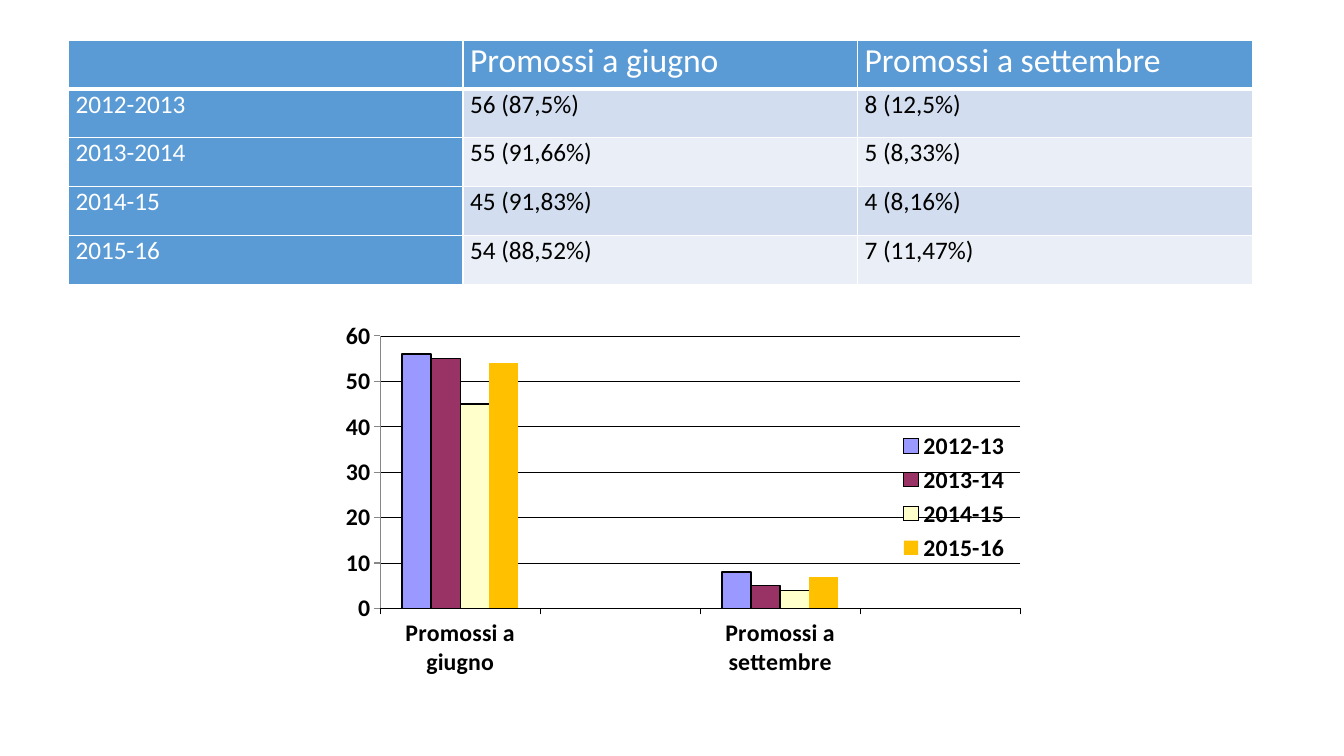
from dataclasses import dataclass

from lxml.etree import SubElement
from pptx import Presentation
from pptx.chart.chart import Chart
from pptx.chart.data import CategoryChartData
from pptx.dml.color import RGBColor
from pptx.enum.chart import XL_CHART_TYPE, XL_LEGEND_POSITION, XL_TICK_LABEL_POSITION, XL_TICK_MARK
from pptx.enum.text import PP_ALIGN
from pptx.oxml import parse_xml
from pptx.oxml.ns import nsdecls, qn
from pptx.slide import Slide
from pptx.table import _Cell
from pptx.util import Inches, Pt

FONT = "Calibri"
WHITE, BLACK, BLUE = "FFFFFF", "000000", "5B9BD5"
BANDS = ("D2DEEF", "EAEFF7")


@dataclass(frozen=True)
class SchoolYear:
    table_label: str
    chart_label: str
    june: int
    june_share: str
    september: int
    september_share: str
    bar_color: str
    outlined: bool = True


HEADERS = ("", "Promossi a giugno", "Promossi a settembre")
YEARS = (
    SchoolYear("2012-2013", "2012-13", 56, "87,5%", 8, "12,5%", "9999FF"),
    SchoolYear("2013-2014", "2013-14", 55, "91,66%", 5, "8,33%", "993366"),
    SchoolYear("2014-15", "2014-15", 45, "91,83%", 4, "8,16%", "FFFFCC"),
    SchoolYear("2015-16", "2015-16", 54, "88,52%", 7, "11,47%", "FFC000", False),
)


def rgb(color: str) -> RGBColor:
    return RGBColor.from_string(color)


def set_borders(cell: _Cell, bottom_width: int) -> None:
    properties = cell._tc.get_or_add_tcPr()
    for side, width in (("L", 1), ("R", 1), ("T", 1), ("B", bottom_width)):
        properties.append(parse_xml(
            f'<a:ln{side} {nsdecls("a")} w="{Pt(width)}"><a:solidFill>'
            f'<a:srgbClr val="{WHITE}"/></a:solidFill></a:ln{side}>'))


def fill_cell(cell: _Cell, text: str, size: int, color: str, fill: str, bottom_width: int) -> None:
    set_borders(cell, bottom_width)
    cell.fill.solid()
    cell.fill.fore_color.rgb = rgb(fill)
    cell.margin_left = cell.margin_right = Inches(0.07)
    cell.margin_top = cell.margin_bottom = 0
    cell.text_frame.text = text
    paragraph = cell.text_frame.paragraphs[0]
    paragraph.alignment = PP_ALIGN.JUSTIFY
    font = paragraph.font
    for run in paragraph.runs:
        font = run.font
    font.name, font.size, font.bold = FONT, Pt(size), False
    font.color.rgb = rgb(color)


def add_results_table(slide: Slide) -> None:
    rows = [HEADERS] + [
        (year.table_label, f"{year.june} ({year.june_share})",
         f"{year.september} ({year.september_share})")
        for year in YEARS
    ]
    table = slide.shapes.add_table(
        len(rows), len(HEADERS), Inches(0.68), Inches(0.4), Inches(11.74), Inches(2.42)).table
    table.first_row = table.horz_banding = False
    for row_index, row in enumerate(rows):
        is_header = row_index == 0
        for column_index, text in enumerate(row):
            is_label = is_header or column_index == 0
            fill_cell(
                table.cell(row_index, column_index), text,
                size=24 if is_header else 18,
                color=WHITE if is_label else BLACK,
                fill=BLUE if is_label else BANDS[(row_index - 1) % 2],
                bottom_width=3 if is_header else 1)


def set_layout(element, x: float, y: float, width: float, height: float, inner: bool = False) -> None:
    """Place a chart part by fractions of the chart's size."""
    layout = element.find(qn("c:layout"))
    if layout is None:
        layout = SubElement(element, qn("c:layout"))
        element.remove(layout)
        if inner:
            element.insert(0, layout)
        else:
            element.find(qn("c:legendPos")).addnext(layout)
    manual = SubElement(layout, qn("c:manualLayout"))
    settings = [("layoutTarget", "inner")] if inner else []
    settings += [("xMode", "edge"), ("yMode", "edge"),
                 ("x", x), ("y", y), ("w", width), ("h", height)]
    for name, value in settings:
        SubElement(manual, qn(f"c:{name}")).set("val", str(value))


def style_axes(chart: Chart) -> None:
    category_axis, value_axis = chart.category_axis, chart.value_axis
    for axis in (category_axis, value_axis):
        axis.major_tick_mark = XL_TICK_MARK.OUTSIDE
        axis.minor_tick_mark = XL_TICK_MARK.NONE
    category_axis.tick_label_position = XL_TICK_LABEL_POSITION.LOW
    value_axis.minimum_scale, value_axis.maximum_scale, value_axis.major_unit = 0, 60, 10
    value_axis.has_major_gridlines = True
    for line in (category_axis.format.line, value_axis.major_gridlines.format.line):
        line.color.rgb = rgb(BLACK)
        line.width = Pt(0.25)


def add_results_chart(slide: Slide) -> None:
    data = CategoryChartData()
    data.categories = [HEADERS[1], "", HEADERS[2], ""]
    for year in YEARS:
        data.add_series(year.chart_label, (year.june, None, year.september, None))
    chart = slide.shapes.add_chart(
        XL_CHART_TYPE.COLUMN_CLUSTERED, Inches(3.22), Inches(3.03),
        Inches(6.9), Inches(3.76), data).chart
    chart.has_title = False
    chart.font.name, chart.font.size, chart.font.bold = FONT, Pt(17), True
    chart.font.color.rgb = rgb(BLACK)
    style_axes(chart)

    plot = chart.plots[0]
    plot.gap_width, plot.overlap, plot.vary_by_categories = 150, 0, False
    for series, year in zip(plot.series, YEARS):
        series.format.fill.solid()
        series.format.fill.fore_color.rgb = rgb(year.bar_color)
        series.invert_if_negative = False
        line = series.format.line
        if year.outlined:
            line.color.rgb = rgb(BLACK)
            line.width = Pt(1)
        else:
            line.fill.background()

    chart.has_legend = True
    chart.legend.position = XL_LEGEND_POSITION.RIGHT
    chart.legend.include_in_layout = False
    set_layout(chart.legend._element, 0.82, 0.32, 0.17, 0.37)
    plot_area = chart._chartSpace.chart.plotArea
    set_layout(plot_area, 0.08, 0.08, 0.92, 0.72, inner=True)


def main() -> None:
    presentation = Presentation()
    presentation.slide_width, presentation.slide_height = Inches(13.33), Inches(7.5)
    slide = presentation.slides.add_slide(presentation.slide_layouts[6])
    add_results_table(slide)
    add_results_chart(slide)
    presentation.save("out.pptx")


if __name__ == "__main__":
    main()
